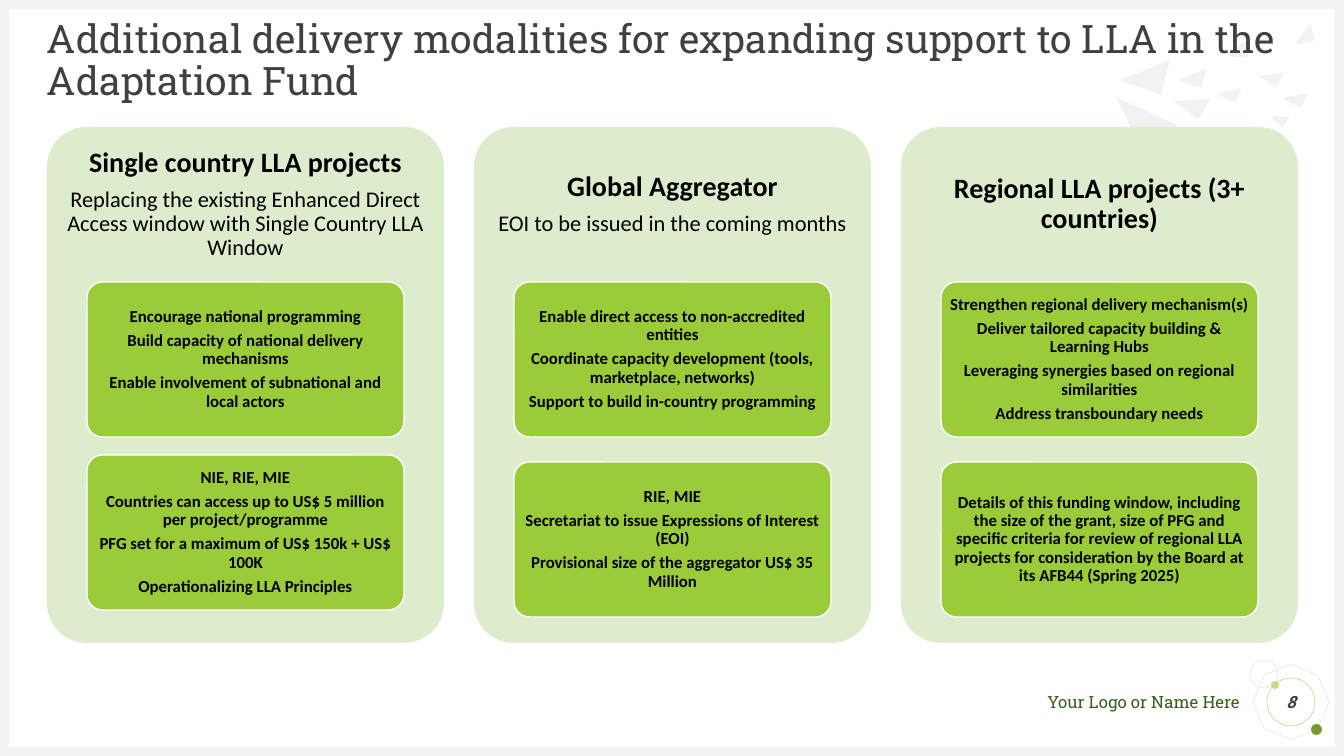
from pptx import Presentation
from pptx.dml.color import RGBColor
from pptx.enum.shapes import MSO_SHAPE
from pptx.enum.text import MSO_ANCHOR, MSO_AUTO_SIZE, PP_ALIGN
from pptx.util import Pt

RECT, ROUND = MSO_SHAPE.RECTANGLE, MSO_SHAPE.ROUNDED_RECTANGLE
OVAL, OCTAGON = MSO_SHAPE.OVAL, MSO_SHAPE.OCTAGON
LEFT, CENTER, RIGHT = PP_ALIGN.LEFT, PP_ALIGN.CENTER, PP_ALIGN.RIGHT
MIDDLE = MSO_ANCHOR.MIDDLE
NO_FIT = MSO_AUTO_SIZE.NONE

EMU_PER_PX = 914400 / 100.8
WIDTH, HEIGHT, EDGE = 1344, 756, 9

TITLE = "Additional delivery modalities for expanding support to LLA in the Adaptation Fund"
CARDS = [
    (
        "Single country LLA projects",
        "Replacing the existing Enhanced Direct Access window with Single Country LLA Window",
        (282, [
            "Encourage national programming",
            "Build capacity of national delivery mechanisms",
            "Enable involvement of subnational and local actors",
        ]),
        (455, [
            "NIE, RIE, MIE",
            "Countries can access up to US$ 5 million per project/programme",
            "PFG set for a maximum of US$ 150k + US$ 100K",
            "Operationalizing LLA Principles",
        ]),
    ),
    (
        "Global Aggregator",
        "EOI to be issued in the coming months",
        (282, [
            "Enable direct access to non-accredited entities",
            "Coordinate capacity development (tools, marketplace, networks)",
            "Support to build in-country programming",
        ]),
        (462, [
            "RIE, MIE",
            "Secretariat to issue Expressions of Interest (EOI)",
            "Provisional size of the aggregator US$ 35 Million",
        ]),
    ),
    (
        "Regional LLA projects (3+ countries)",
        None,
        (282, [
            "Strengthen regional delivery mechanism(s)",
            "Deliver tailored capacity building & Learning Hubs",
            "Leveraging synergies based on regional similarities",
            "Address transboundary needs",
        ]),
        (462, [
            "Details of this funding window, including the size of the grant, size of PFG "
            "and specific criteria for review of regional LLA projects for consideration "
            "by the Board at its AFB44 (Spring 2025)",
        ]),
    ),
]
SHARDS = [
    [(1170, 60), (1161, 95), (1120, 80)],
    [(1211, 99), (1198, 119), (1173, 101)],
    [(1206, 69), (1201, 88), (1178, 80)],
    [(1242, 88), (1235, 103), (1217, 94)],
    [(1247, 40), (1248, 57), (1234, 57), (1228, 55)],
    [(1290, 117), (1282, 127), (1274, 120), (1271, 116)],
    [(1310, 24), (1315, 40), (1302, 44), (1295, 44)],
    [(1284, 73), (1276, 87), (1259, 76)],
    [(1308, 93), (1301, 108), (1288, 102), (1283, 98)],
    [(1177, 125), (1150, 167), (1116, 97)],
]


def px(n):
    """Turn px into EMU."""
    return round(n * EMU_PER_PX)


def rgb(code):
    """Turn a hex string into a colour."""
    return RGBColor.from_string(code)


class Deck:
    """Holds the style and the current slide."""

    HEAD, BODY = "Roboto Slab", "Calibri"
    GREY, DARK, OUTLINE = "F2F2F2", "404040", "D9D9D9"
    PALE, GREEN, LIME, MOSS, FOREST = "DEECCE", "9ACB39", "C2E088", "749A29", "375C1E"
    BLACK, WHITE = "000000", "FFFFFF"

    def __init__(self, prs):
        """Add a title-only slide."""
        self.s = prs.slides.add_slide(prs.slide_layouts[5])

    def paint(self, sp, fill, line, weight):
        """Set the fill and outline of a shape."""
        sp.shadow.inherit = False
        if fill:
            sp.fill.solid()
            sp.fill.fore_color.rgb = rgb(fill)
        else:
            sp.fill.background()
        if line:
            sp.line.color.rgb = rgb(line)
            sp.line.width = Pt(weight)
        else:
            sp.line.fill.background()
        return sp

    def shape(self, kind, box, fill=None, line=None, weight=0.25):
        """Add a preset shape."""
        sp = self.s.shapes.add_shape(kind, *map(px, box))
        if kind == ROUND:
            sp.adjustments[0] = 0.1
        return self.paint(sp, fill, line, weight)

    def shard(self, points):
        """Add a grey polygon."""
        builder = self.s.shapes.build_freeform(*points[0], scale=EMU_PER_PX)
        builder.add_line_segments(points[1:], close=True)
        return self.paint(builder.convert_to_shape(), self.GREY, None, 0)

    def set_text(self, sp, lines, font, color, align=CENTER, inset=0, spacing=1.0, after=0.0, italic=False):
        """Fill a shape with paragraphs given as (text, size, bold)."""
        tf = sp.text_frame
        tf.word_wrap = True
        tf.auto_size = NO_FIT
        tf.vertical_anchor = MIDDLE
        tf.margin_left = tf.margin_right = tf.margin_top = tf.margin_bottom = px(inset)
        for i, (text, size, bold) in enumerate(lines):
            p = tf.add_paragraph() if i else tf.paragraphs[0]
            p.text = text
            p.alignment = align
            p.line_spacing = spacing
            p.space_after = Pt(size * after)
            p.font.name, p.font.size = font, Pt(size)
            p.font.bold, p.font.italic = bold, italic
            p.font.color.rgb = rgb(color)

    def text(self, box, lines, font, color, **style):
        """Add a text box."""
        self.set_text(self.s.shapes.add_textbox(*map(px, box)), lines, font, color, **style)

    def title(self, box, text):
        """Place the title above the decoration."""
        sp = self.s.shapes.title
        sp.left, sp.top, sp.width, sp.height = map(px, box)
        self.set_text(sp, [(text, 28, False)], self.HEAD, self.DARK, align=LEFT, spacing=0.9)
        self.s.shapes.element.append(sp.element)

    def card(self, x, heading, note, *panels):
        """Add a card with a heading and its panels."""
        style = dict(spacing=0.9, after=0.35)
        self.shape(ROUND, (x, 127, 397, 516), self.PALE)
        lines = [(heading, 20, True)]
        if note:
            lines.append((note, 16, False))
        self.text((x, 127, 397, 155), lines, self.BODY, self.BLACK, inset=8, **style)
        for y, items in panels:
            sp = self.shape(ROUND, (x + 40, y, 317, 155), self.GREEN, self.WHITE, 1)
            self.set_text(sp, [(item, 12, True) for item in items], self.BODY, self.BLACK, inset=3, **style)


def main():
    """Build the slide."""
    prs = Presentation()
    prs.slide_width, prs.slide_height = px(WIDTH), px(HEIGHT)
    d = Deck(prs)

    d.shape(OCTAGON, (1256, 667, 70, 70), line=d.OUTLINE).rotation = 22.7
    d.shape(OVAL, (1271, 681, 8, 8), d.LIME)
    d.shape(OVAL, (1311, 724, 11, 11), d.MOSS)
    d.text((963, 692, 277, 20), [("Your Logo or Name Here", 12, False)], d.HEAD, d.FOREST, align=RIGHT)
    d.shape(OVAL, (1250, 660, 28, 28), line=d.OUTLINE)
    for y in (0, HEIGHT - EDGE):
        d.shape(RECT, (0, y, WIDTH, EDGE), d.GREY)
    for x in (0, WIDTH - EDGE):
        d.shape(RECT, (x, 0, EDGE, HEIGHT), d.GREY)
    for points in SHARDS:
        d.shard(points)

    for i, card in enumerate(CARDS):
        d.card(47 + 427 * i, *card)
    d.title((47, 38, 1250, 47), TITLE)
    number = d.shape(OVAL, (1267, 678, 48, 48), line=d.GREEN)
    d.set_text(number, [("8", 12, True)], d.HEAD, d.DARK, italic=True)
    prs.save("out.pptx")


if __name__ == "__main__":
    main()
